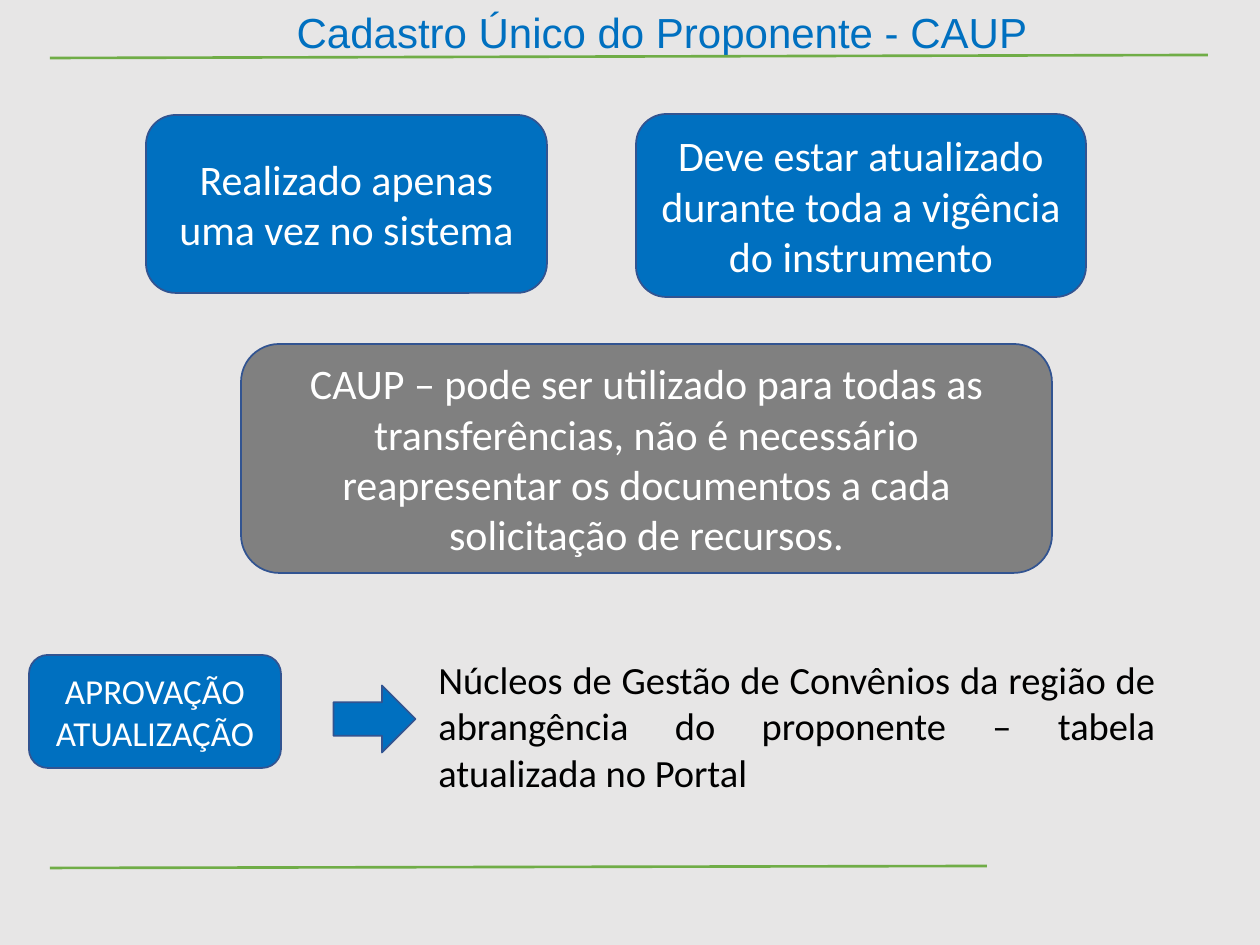
import pptx
import pptx.util
import pptx.dml.color
import pptx.enum.shapes
import pptx.enum.text
import pptx.oxml

RGBColor = pptx.dml.color.RGBColor
SHAPE = pptx.enum.shapes.MSO_SHAPE
ALIGN = pptx.enum.text.PP_ALIGN
ANCHOR = pptx.enum.text.MSO_ANCHOR
AUTO = pptx.enum.text.MSO_AUTO_SIZE

GREY_LIGHT = RGBColor(0xE7, 0xE6, 0xE6)
GREY = RGBColor(0x80, 0x80, 0x80)
BLUE = RGBColor(0x00, 0x70, 0xC0)
BLUE_DARK = RGBColor(0x32, 0x54, 0x91)
GREEN = RGBColor(0x70, 0xAD, 0x47)
WHITE = RGBColor(0xFF, 0xFF, 0xFF)
BLACK = RGBColor(0x00, 0x00, 0x00)

PX_PER_INCH = 126
NO_EFFECTS = '<a:effectLst xmlns:a="http://schemas.openxmlformats.org/drawingml/2006/main"/>'


def px(*values):
    return [pptx.util.Emu(round(v * 914400 / PX_PER_INCH)) for v in values]


def write(tf, lines, align, size, color, name="Calibri", **frame):
    for key, value in frame.items():
        setattr(tf, key, value)
    font = {"size": pptx.util.Pt(size), "name": name}
    for i, line in enumerate(lines):
        p = tf.paragraphs[0] if i == 0 else tf.add_paragraph()
        p.alignment = align
        r = p.add_run()
        r.text = line
        for key, value in font.items():
            setattr(r.font, key, value)
        r.font.color.rgb = color


def add_rule(s, x1, y1, x2, y2):
    line = s.shapes.add_connector(
        pptx.enum.shapes.MSO_CONNECTOR.STRAIGHT, *px(x1, y1, x2, y2))
    line.line.color.rgb = GREEN
    line.line.width = pptx.util.Pt(1.5)
    line._element.spPr.append(pptx.oxml.parse_xml(NO_EFFECTS))


def add_block(s, kind, box, fill):
    sp = s.shapes.add_shape(kind, *px(*box))
    sp.shadow.inherit = False
    sp.fill.solid()
    sp.fill.fore_color.rgb = fill
    sp.line.color.rgb = BLUE_DARK
    sp.line.width = pptx.util.Pt(1)
    return sp


def add_card(s, box, lines, fill=BLUE, size=24):
    sp = add_block(s, SHAPE.ROUNDED_RECTANGLE, box, fill)
    write(sp.text_frame, lines, ALIGN.CENTER, size, WHITE,
          word_wrap=True, vertical_anchor=ANCHOR.MIDDLE)


def add_header(s, box, title):
    x, y, w, h = box
    add_rule(s, x, y + 58, x + w, y + 55)
    sp = s.shapes.title
    sp.left, sp.top, sp.width, sp.height = px(x + 234, y, 764, h)
    write(sp.text_frame, [title], ALIGN.LEFT, 24, BLUE, "Arial",
          word_wrap=False, vertical_anchor=ANCHOR.TOP,
          auto_size=AUTO.SHAPE_TO_FIT_TEXT)


def add_approval(s, box, lines, note):
    x, y, w, h = box
    add_card(s, (x, y + 5, 252, 113), lines, size=20)
    arrow = add_block(s, SHAPE.DOWN_ARROW, (x + 312, y + 28, 67, 82), BLUE)
    arrow.rotation = 270
    note_x = 397
    tb = s.shapes.add_textbox(*px(x + note_x, y, w - note_x, h))
    write(tb.text_frame, [note], ALIGN.JUSTIFY, 22, BLACK,
          word_wrap=True, auto_size=AUTO.SHAPE_TO_FIT_TEXT)


def main():
    prs = pptx.Presentation()
    prs.slide_width, prs.slide_height = px(1260, 945)
    s = prs.slides.add_slide(prs.slide_layouts[5])
    s.background.fill.solid()
    s.background.fill.fore_color.rgb = GREY_LIGHT

    add_header(s, (50, 0, 1158, 63), "Cadastro Único do Proponente - CAUP")
    add_card(s, (146, 115, 401, 178), ["Realizado apenas uma vez no sistema"])
    add_card(s, (636, 114, 450, 183),
             ["Deve estar atualizado durante toda a vigência do instrumento"])
    add_card(s, (241, 344, 811, 229),
             ["CAUP – pode ser utilizado para todas as transferências, não é "
              "necessário reapresentar os documentos a cada solicitação de recursos."],
             fill=GREY)
    add_approval(s, (29, 650, 1139, 152), ["APROVAÇÃO", "ATUALIZAÇÃO"],
                 "Núcleos de Gestão de Convênios da região de abrangência do "
                 "proponente – tabela atualizada no Portal")
    add_rule(s, 50, 868, 987, 866)
    prs.save("out.pptx")


if __name__ == "__main__":
    main()
